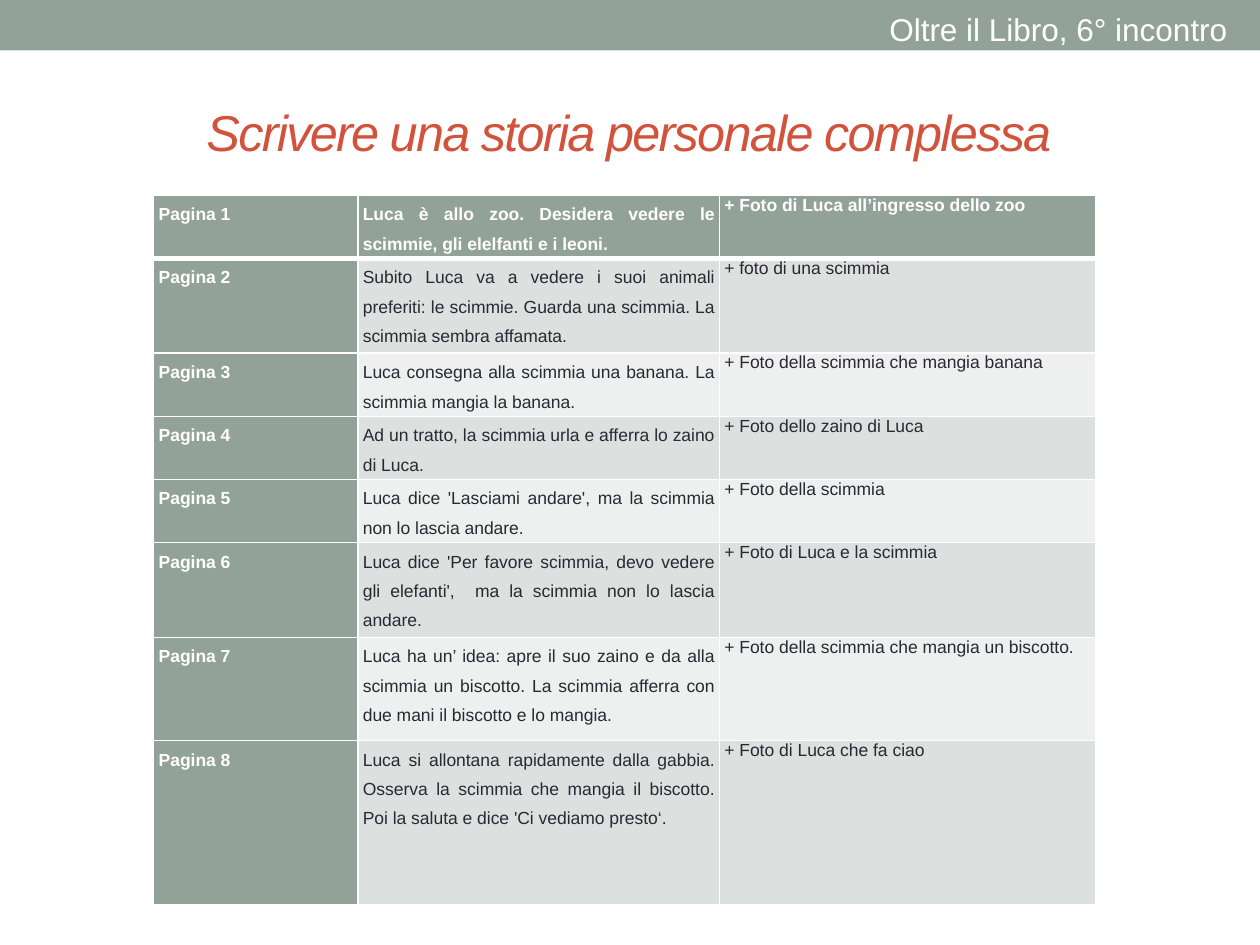
from lxml import etree
from pptx import Presentation
from pptx.dml.color import RGBColor
from pptx.enum.shapes import MSO_SHAPE
from pptx.enum.text import MSO_ANCHOR, MSO_AUTO_SIZE, PP_ALIGN
from pptx.oxml.ns import qn
from pptx.util import Inches, Pt

RECTANGLE = MSO_SHAPE.RECTANGLE
MIDDLE, TOP = MSO_ANCHOR.MIDDLE, MSO_ANCHOR.TOP
FIT_SHAPE = MSO_AUTO_SIZE.SHAPE_TO_FIT_TEXT
CENTER, JUSTIFY, LEFT = PP_ALIGN.CENTER, PP_ALIGN.JUSTIFY, PP_ALIGN.LEFT

FONT = "Arial"
COLORS = {
    "sage": "93A299",
    "red": "D2533C",
    "ink": "292934",
    "white": "FFFFFF",
    "dark_band": "DCE0DE",
    "light_band": "EEF0EF",
}
COLUMN_WIDTHS = [1.62, 2.87, 2.99]
ROW_HEIGHTS = [0.49, 0.65, 0.49, 0.33, 0.49, 0.65, 0.82, 1.3]
STORY = [
    ("Luca è allo zoo. Desidera vedere le scimmie, gli elelfanti e i leoni.",
     "+ Foto di Luca all’ingresso dello zoo"),
    ("Subito Luca va a vedere i suoi animali preferiti: le scimmie. Guarda una scimmia. "
     "La scimmia sembra affamata.",
     "+ foto di una scimmia"),
    ("Luca consegna alla scimmia una banana. La scimmia mangia la banana.",
     "+ Foto della scimmia che mangia banana"),
    ("Ad un tratto, la scimmia urla e afferra lo zaino di Luca.",
     "+ Foto dello zaino di Luca"),
    ("Luca dice 'Lasciami andare', ma la scimmia non lo lascia andare.",
     "+ Foto della scimmia"),
    ("Luca dice 'Per favore scimmia, devo vedere gli elefanti',  ma la scimmia non lo lascia andare.",
     "+ Foto di Luca e la scimmia"),
    ("Luca ha un’ idea: apre il suo zaino e da alla scimmia un biscotto. "
     "La scimmia afferra con due mani il biscotto e lo mangia.",
     "+ Foto della scimmia che mangia un biscotto."),
    ("Luca si allontana rapidamente dalla gabbia. Osserva la scimmia che mangia il biscotto. "
     "Poi la saluta e dice 'Ci vediamo presto‘.",
     "+ Foto di Luca che fa ciao"),
]


def rgb(name):
    return RGBColor.from_string(COLORS[name])


def set_attributes(target, **values):
    for name, value in values.items():
        setattr(target, name, value)


def write(paragraph, text, color, **font_values):
    run = paragraph.add_run()
    run.text = text
    set_attributes(run.font, name=FONT, **font_values)
    run.font.color.rgb = rgb(color)
    return run


def add_header(slide, left, top, width, height):
    band = slide.shapes.add_shape(
        RECTANGLE, Inches(left), Inches(top), Inches(width), Inches(height))
    band.shadow.inherit = False
    band.fill.solid()
    band.fill.fore_color.rgb = rgb("sage")
    band.line.fill.background()

    label_width = 2.91
    label = slide.shapes.add_textbox(
        Inches(left + width - label_width - 0.13), Inches(top + 0.03),
        Inches(label_width), Inches(height))
    set_attributes(label.text_frame, word_wrap=False, auto_size=FIT_SHAPE)
    write(label.text_frame.paragraphs[0], "Oltre il Libro, 6° incontro", "white", size=Pt(18))


def add_title(slide, left, top, width, height):
    title = slide.shapes.title
    set_attributes(title, left=Inches(left), top=Inches(top),
                   width=Inches(width), height=Inches(height))
    set_attributes(title.text_frame, word_wrap=True, vertical_anchor=MIDDLE,
                   auto_size=MSO_AUTO_SIZE.NONE, margin_bottom=Inches(0.55))
    heading = title.text_frame.paragraphs[0]
    heading.alignment = CENTER
    run = write(heading, "Scrivere una storia personale complessa", "red",
                size=Pt(28.8), italic=True, bold=False)
    run.font._element.set("spc", "-100")


def set_borders(cell, **widths):
    """Draw white cell borders; widths are points keyed by L, R, T and B."""
    properties = cell._tc.get_or_add_tcPr()
    for position, (side, width) in enumerate(widths.items()):
        line = etree.Element(qn(f"a:ln{side}"), w=str(Pt(width)))
        fill = etree.SubElement(line, qn("a:solidFill"))
        etree.SubElement(fill, qn("a:srgbClr"), val=COLORS["white"])
        properties.insert(position, line)


def fill_cell(cell, text, row, column):
    strong = row == 0 or column == 0
    band = "dark_band" if row % 2 else "light_band"
    cell.fill.solid()
    cell.fill.fore_color.rgb = rgb("sage" if strong else band)
    set_attributes(cell, margin_left=Inches(0.04), margin_right=Inches(0.04),
                   margin_top=0, margin_bottom=0, vertical_anchor=TOP)
    set_borders(cell, L=1, R=1, T=3 if row == 1 else 1, B=3 if row == 0 else 1)

    paragraph = cell.text_frame.paragraphs[0]
    if column < 2:
        set_attributes(paragraph, alignment=JUSTIFY, line_spacing=1.5)
    else:
        paragraph.alignment = LEFT
    write(paragraph, text, "white" if strong else "ink", size=Pt(10), bold=strong)


def add_story_table(slide, left, top, width, height):
    table = slide.shapes.add_table(
        len(STORY), len(COLUMN_WIDTHS),
        Inches(left), Inches(top), Inches(width), Inches(height)).table
    table.first_col = True
    for column, column_width in zip(table.columns, COLUMN_WIDTHS):
        column.width = Inches(column_width)
    for row, (row_height, page) in enumerate(zip(ROW_HEIGHTS, STORY)):
        table.rows[row].height = Inches(row_height)
        for column, text in enumerate((f"Pagina {row + 1}", *page)):
            fill_cell(table.cell(row, column), text, row, column)


def main():
    presentation = Presentation()
    set_attributes(presentation, slide_width=Inches(10), slide_height=Inches(7.5))
    slide = presentation.slides.add_slide(presentation.slide_layouts.get_by_name("Title Only"))
    add_header(slide, 0, 0, 10, 0.4)
    add_title(slide, 0.11, 0.67, 9.76, 1.25)
    add_story_table(slide, 1.22, 1.55, sum(COLUMN_WIDTHS), sum(ROW_HEIGHTS))
    presentation.save("out.pptx")


if __name__ == "__main__":
    main()
